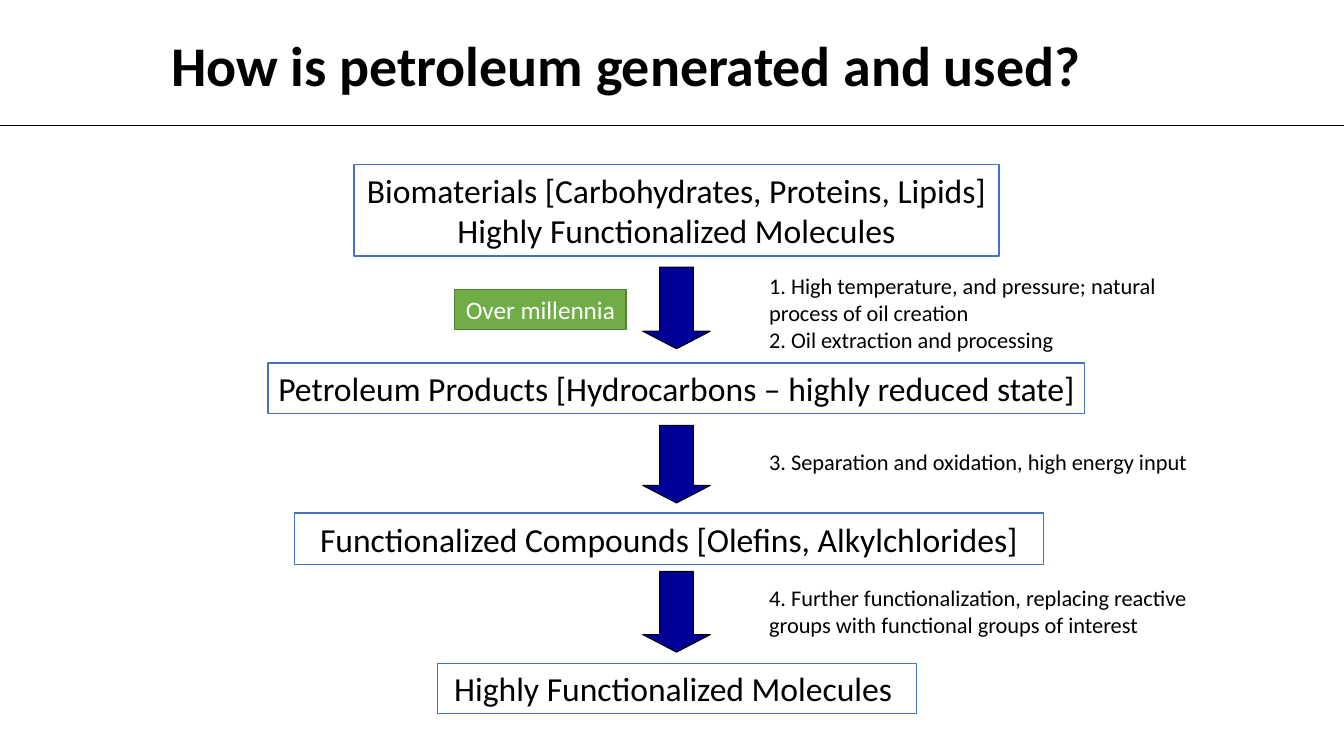
from dataclasses import dataclass

from lxml import etree
from pptx import Presentation
from pptx.dml.color import RGBColor
from pptx.enum.shapes import MSO_CONNECTOR, MSO_SHAPE
from pptx.enum.text import MSO_ANCHOR, PP_ALIGN
from pptx.oxml.ns import qn
from pptx.util import Inches, Pt

RECT, DOWN = MSO_SHAPE.RECTANGLE, MSO_SHAPE.DOWN_ARROW
STRAIGHT = MSO_CONNECTOR.STRAIGHT
LEFT, CENTER = PP_ALIGN.LEFT, PP_ALIGN.CENTER
TOP, MIDDLE = MSO_ANCHOR.TOP, MSO_ANCHOR.MIDDLE


@dataclass(frozen=True)
class Theme:
    font: str = "Calibri"
    black: str = "000000"
    white: str = "FFFFFF"
    blue: str = "4472C4"
    navy: str = "000099"
    green: str = "70AD47"
    moss: str = "538035"
    title: int = 40
    stage: int = 24
    badge: int = 18
    note: int = 16


THEME = Theme()
WIDTH, HEIGHT = 13.33, 7.5
AXIS = 6.71
ARROW_W = 0.67
NOTE_X = 7.53

# left, top, width, height, lines
STAGES = [
    (3.51, 1.63, 6.4, 0.91, ["Biomaterials [Carbohydrates, Proteins, Lipids]",
                             "Highly Functionalized Molecules"]),
    (2.66, 3.6, 8.1, 0.5, ["Petroleum Products [Hydrocarbons – highly reduced state]"]),
    (2.92, 5.09, 7.43, 0.51, ["Functionalized Compounds [Olefins, Alkylchlorides]"]),
    (4.34, 6.58, 4.75, 0.5, ["Highly Functionalized Molecules "]),
]
# top, height
ARROWS = [(2.65, 0.81), (4.22, 0.77), (5.67, 0.8)]
# top, width, height, lines
NOTES = [
    (2.65, 4.56, 0.91, ["1. High temperature, and pressure; natural process of oil creation",
                        "2. Oil extraction and processing"]),
    (4.4, 4.6, 0.37, ["3. Separation and oxidation, high energy input"]),
    (5.75, 4.94, 0.64, ["4. Further functionalization, replacing reactive groups "
                        "with functional groups of interest"]),
]


def color(code):
    return RGBColor.from_string(code)


def inches(*sizes):
    return [Inches(size) for size in sizes]


def write(shape, lines, size, ink=THEME.black, align=LEFT, anchor=MIDDLE,
          wrap=True, bold=False):
    frame = shape.text_frame
    frame.word_wrap = wrap
    frame.vertical_anchor = anchor
    for i, line in enumerate(lines):
        para = frame.add_paragraph() if i else frame.paragraphs[0]
        para.alignment = align
        run = para.add_run()
        run.text = line
        run.font.name = THEME.font
        run.font.size = Pt(size)
        run.font.bold = bold
        run.font.color.rgb = color(ink)


def add_form(slide, kind, place, fill, edge, weight=1):
    form = slide.shapes.add_shape(kind, *inches(*place))
    form.shadow.inherit = False
    form.fill.solid()
    form.fill.fore_color.rgb = color(fill)
    form.line.color.rgb = color(edge)
    form.line.width = Pt(weight)
    return form


def add_box(slide, place, lines, size, fill, edge, ink):
    box = add_form(slide, RECT, place, fill, edge)
    write(box, lines, size, ink, CENTER, wrap=False)


def add_arrow(slide, top, height):
    place = (AXIS - ARROW_W / 2, top, ARROW_W, height)
    arrow = add_form(slide, DOWN, place, THEME.navy, THEME.black, 0.75)
    arrow.adjustments[0] = 0.5
    arrow.adjustments[1] = 0.26


def add_text(slide, place, lines, size, **style):
    write(slide.shapes.add_textbox(*inches(*place)), lines, size, **style)


def add_rule(slide, top):
    rule = slide.shapes.add_connector(STRAIGHT, *inches(0, top, WIDTH, top))
    rule.line.color.rgb = color(THEME.black)
    rule.line.width = Pt(0.5)
    etree.SubElement(rule._element.spPr, qn("a:effectLst"))


def main():
    deck = Presentation()
    deck.slide_width, deck.slide_height = inches(WIDTH, HEIGHT)
    slide = deck.slides.add_slide(deck.slide_layouts[6])

    add_rule(slide, 1.24)
    add_text(slide, (1.51, 0.25, 9.4, 0.77), ["How is petroleum generated and used?"],
             THEME.title, align=CENTER, bold=True)
    for *place, lines in STAGES:
        add_box(slide, place, lines, THEME.stage, THEME.white, THEME.blue, THEME.black)
    for top, height in ARROWS:
        add_arrow(slide, top, height)
    for top, width, height, lines in NOTES:
        add_text(slide, (NOTE_X, top, width, height), lines, THEME.note, anchor=TOP)
    add_box(slide, (4.51, 2.87, 1.7, 0.4), ["Over millennia"], THEME.badge,
            THEME.green, THEME.moss, THEME.white)

    deck.save("out.pptx")


if __name__ == "__main__":
    main()
